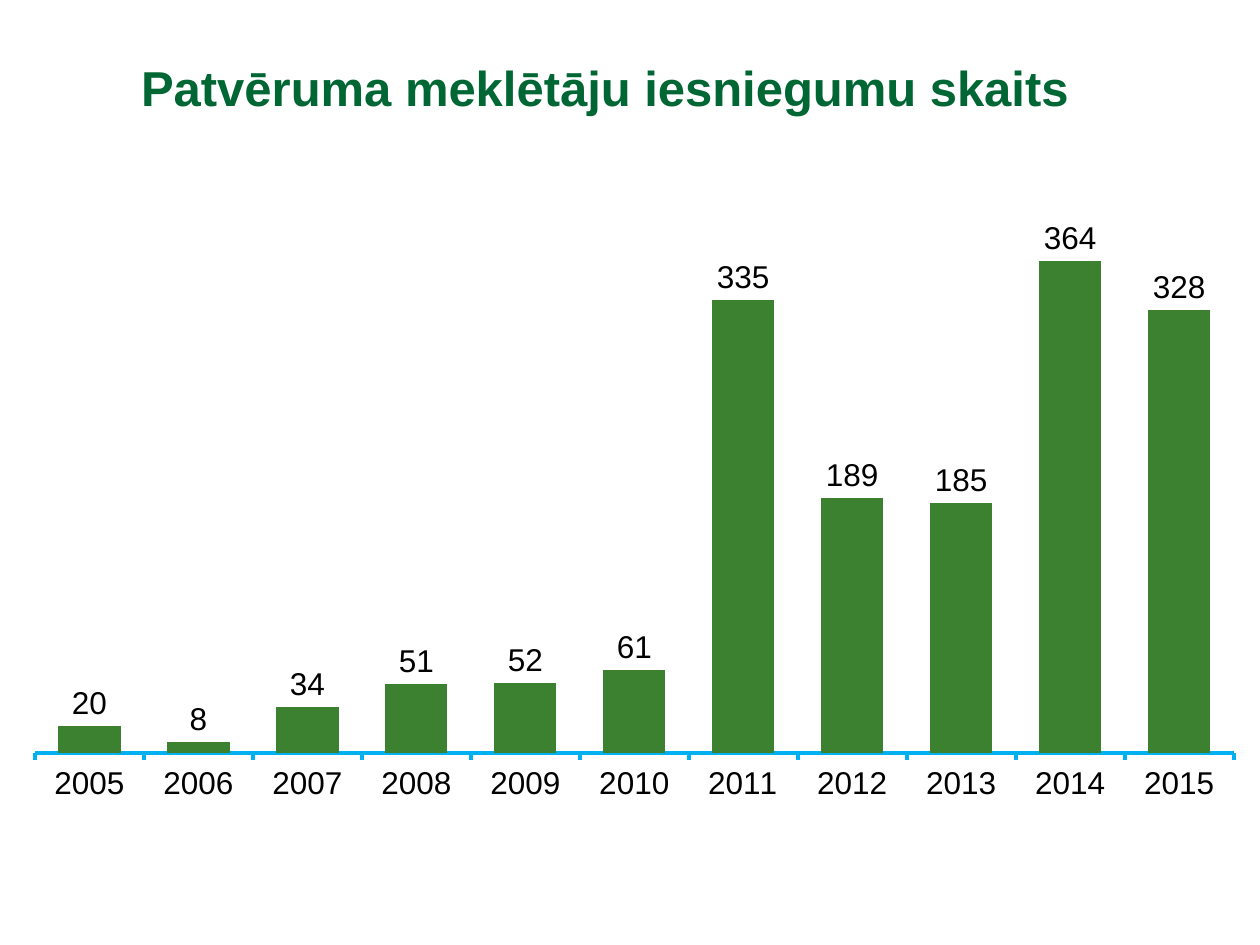
from lxml.etree import SubElement
from pptx import Presentation
from pptx.chart.data import CategoryChartData
from pptx.dml.color import RGBColor
from pptx.enum.chart import XL_CHART_TYPE as ChartType, XL_LABEL_POSITION as LabelPosition, XL_TICK_MARK as TickMark
from pptx.enum.text import MSO_ANCHOR as Anchor, PP_ALIGN as Align
from pptx.oxml.ns import qn
from pptx.util import Inches, Pt

TITLE = "Patvēruma meklētāju iesniegumu skaits"
FIRST_YEAR = 2005
APPLICATIONS = [20, 8, 34, 51, 52, 61, 335, 189, 185, 364, 328]
COLORS = {"title": "006633", "bar": "3B812F", "axis": "00B0F0", "text": "000000"}
FONT = "Arial"
TITLE_BOX = (0.9, 0.29, 7.8, 0.8)
CHART_BOX = (0.23, 1.33, 9.61, 5.39)
PLOT_LAYOUT = {"x": 0.005, "y": 0.066, "w": 0.99, "h": 0.796}


def color(name):
    """Return the named colour."""
    return RGBColor.from_string(COLORS[name])


def style_font(font, size, color_name, bold=False):
    """Set the typeface, size, colour and weight of a font."""
    font.name, font.size, font.bold = FONT, Pt(size), bold
    font.color.rgb = color(color_name)


def add_title(slide):
    """Place and format the slide title."""
    title = slide.shapes.title
    title.left, title.top, title.width, title.height = map(Inches, TITLE_BOX)
    title.text_frame.vertical_anchor = Anchor.MIDDLE
    title.text_frame.text = TITLE
    paragraph = title.text_frame.paragraphs[0]
    paragraph.alignment = Align.CENTER
    style_font(paragraph.font, 28, "title", bold=True)


def set_plot_layout(chart):
    """Fix the inner plot area as fractions of the chart."""
    plot_area = chart._chartSpace.chart.plotArea
    layout = plot_area.find(qn("c:layout"))
    if layout is None:
        layout = SubElement(plot_area, qn("c:layout"))
        plot_area.insert(0, layout)
    manual = SubElement(layout, qn("c:manualLayout"))
    settings = {"layoutTarget": "inner", "xMode": "edge", "yMode": "edge", **PLOT_LAYOUT}
    for tag, value in settings.items():
        SubElement(manual, qn(f"c:{tag}")).set("val", str(value))


def add_column_chart(slide):
    """Add the yearly column chart with value labels."""
    data = CategoryChartData()
    data.categories = [str(FIRST_YEAR + i) for i in range(len(APPLICATIONS))]
    data.add_series("Series 1", APPLICATIONS)
    frame = slide.shapes.add_chart(ChartType.COLUMN_CLUSTERED, *map(Inches, CHART_BOX), data)
    chart = frame.chart
    chart.has_legend = chart.has_title = False
    style_font(chart.font, 18, "text")

    plot = chart.plots[0]
    plot.gap_width, plot.overlap, plot.vary_by_categories = 75, -30, False
    fill = plot.series[0].format.fill
    fill.solid()
    fill.fore_color.rgb = color("bar")
    plot.has_data_labels = True
    plot.data_labels.show_value = True
    plot.data_labels.position = LabelPosition.OUTSIDE_END

    category_axis, value_axis = chart.category_axis, chart.value_axis
    category_axis.major_tick_mark = TickMark.OUTSIDE
    category_axis.format.line.color.rgb = color("axis")
    category_axis.format.line.width = Pt(2.25)
    value_axis.minimum_scale, value_axis.maximum_scale = 0, 400
    value_axis.has_major_gridlines = value_axis.visible = False
    set_plot_layout(chart)


def main():
    """Build and save the presentation."""
    presentation = Presentation()
    presentation.slide_width, presentation.slide_height = Inches(10), Inches(7.5)
    slide = presentation.slides.add_slide(presentation.slide_layouts[5])
    add_title(slide)
    add_column_chart(slide)
    presentation.save("out.pptx")


if __name__ == "__main__":
    main()
